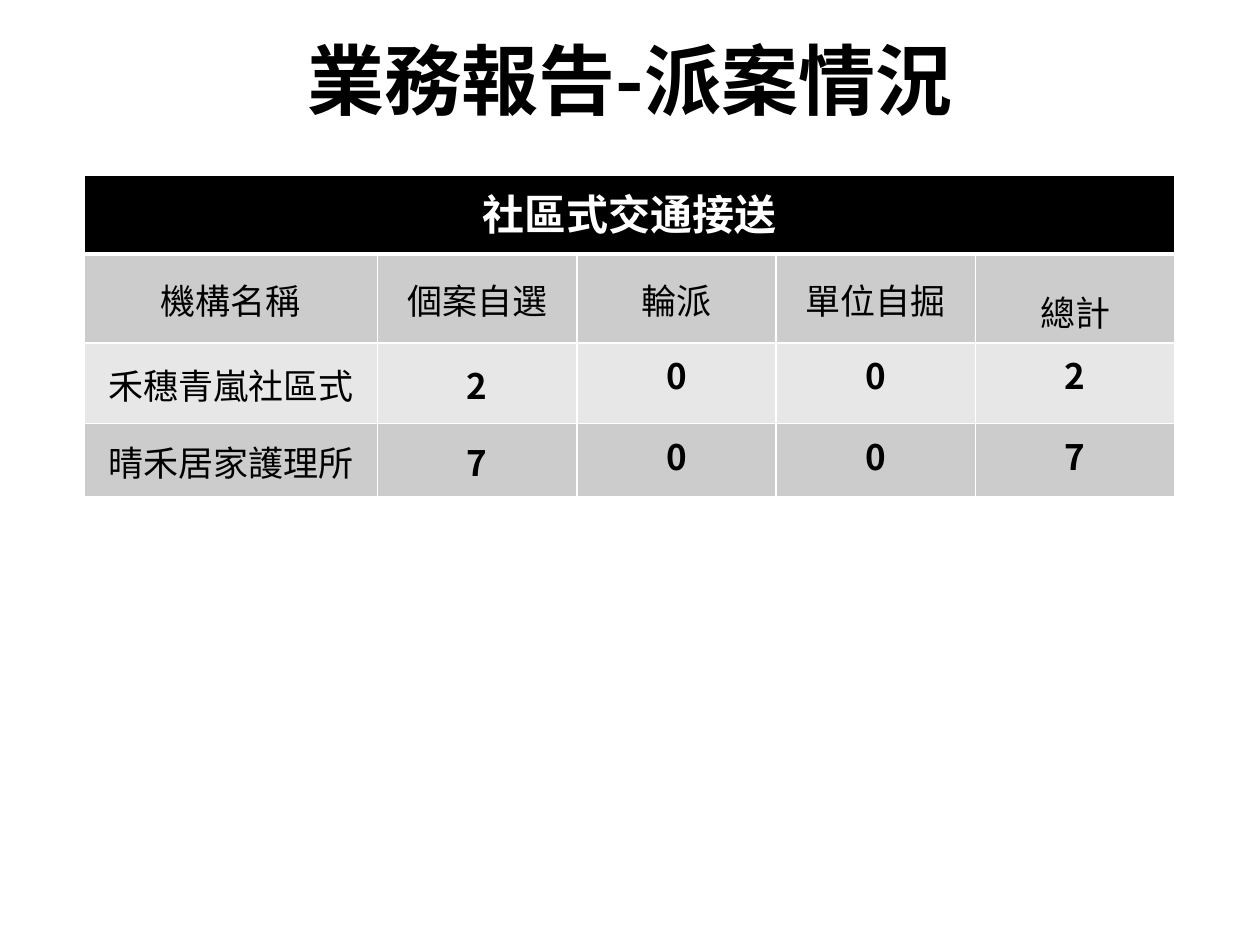
from dataclasses import dataclass

from lxml.etree import SubElement
from pptx import Presentation
from pptx.dml.color import RGBColor
from pptx.enum.text import MSO_ANCHOR, PP_ALIGN
from pptx.oxml.ns import qn
from pptx.util import Cm, Pt


@dataclass(frozen=True)
class Theme:
    font: str = "Noto Sans CJK SC"
    black: str = "000000"
    white: str = "FFFFFF"
    dark_band: str = "CCCCCC"
    light_band: str = "E7E7E7"
    title_size: int = 44
    header_size: int = 24
    body_size: int = 20
    thin_line: int = 1
    thick_line: int = 3


theme = Theme()


def write_text(frame, text, size, color, bold):
    frame.text = text
    para = frame.paragraphs[0]
    para.alignment = PP_ALIGN.CENTER
    for span in para.runs:
        span.font.name = theme.font
        span.font.size = Pt(size)
        span.font.bold = bold
        span.font.color.rgb = RGBColor.from_string(color)
        SubElement(span.font._element, qn("a:ea"), typeface=theme.font)


def style_cell(cell, fill_color, line_widths):
    properties = cell._tc.get_or_add_tcPr()
    for side, width in line_widths.items():
        line = SubElement(properties, qn(f"a:ln{side}"), w=str(Pt(width)))
        solid = SubElement(line, qn("a:solidFill"))
        SubElement(solid, qn("a:srgbClr"), val=theme.white)
    cell.fill.solid()
    cell.fill.fore_color.rgb = RGBColor.from_string(fill_color)


deck = Presentation()
deck.slide_width, deck.slide_height = Cm(25.4), Cm(19.05)
page = deck.slides.add_slide(deck.slide_layouts[6])

# Assignment table
rows = [
    ["社區式交通接送", "", "", "", ""],
    ["機構名稱", "個案自選", "輪派", "單位自掘", "總計"],
    ["禾穗青嵐社區式", "2", "0", "0", "2"],
    ["晴禾居家護理所", "7", "0", "0", "7"],
]
column_widths = [5.91] + [4.02] * 4
row_heights = [1.59, 1.63, 1.63, 1.47]
table = page.shapes.add_table(
    len(rows), len(column_widths), Cm(1.7), Cm(3.53),
    Cm(sum(column_widths)), Cm(sum(row_heights)),
).table
for column, width in zip(table.columns, column_widths):
    column.width = Cm(width)
for row, height in zip(table.rows, row_heights):
    row.height = Cm(height)
table.cell(0, 0).merge(table.cell(0, len(column_widths) - 1))

row_fills = [theme.black, theme.dark_band, theme.light_band, theme.dark_band]
for row_index, values in enumerate(rows):
    # The rule under the heading row is the only thick one
    line_widths = dict.fromkeys("LRTB", theme.thin_line)
    if row_index < 2:
        line_widths["B" if row_index == 0 else "T"] = theme.thick_line
    for column_index, value in enumerate(values):
        cell = table.cell(row_index, column_index)
        style_cell(cell, row_fills[row_index], line_widths)
        if row_index == 0:
            if value:
                write_text(cell.text_frame, value, theme.header_size, theme.white, True)
            continue
        write_text(cell.text_frame, value, theme.body_size, theme.black, value.isdigit())
        # Labels and the first count column are centred with tight margins
        if column_index < 2 or (row_index == 1 and column_index < 4):
            cell.vertical_anchor = MSO_ANCHOR.MIDDLE
            cell.margin_left = cell.margin_right = cell.margin_top = Cm(0.03)
            cell.margin_bottom = 0
table.cell(1, 4).text_frame.paragraphs[0].line_spacing = 1.5

# Title
title_box = page.shapes.add_textbox(Cm(1.27), 0, Cm(22.86), Cm(3.18))
title_box.text_frame.word_wrap = True
title_box.text_frame.vertical_anchor = MSO_ANCHOR.MIDDLE
write_text(title_box.text_frame, "業務報告-派案情況", theme.title_size, theme.black, True)

deck.save("out.pptx")
